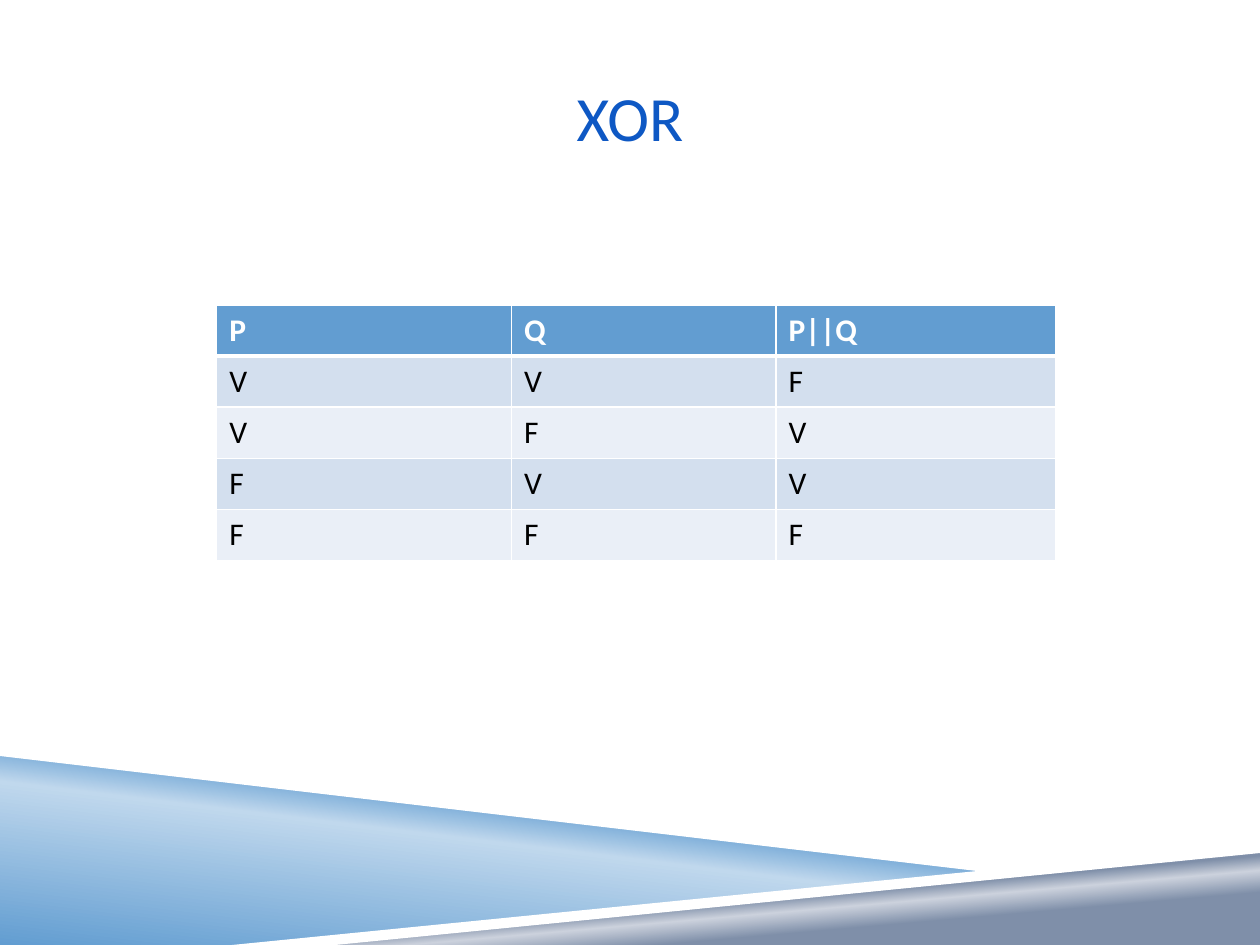
from dataclasses import dataclass

from lxml.etree import SubElement
from pptx import Presentation
from pptx.dml.color import RGBColor
from pptx.enum.text import MSO_ANCHOR, PP_ALIGN
from pptx.oxml import parse_xml
from pptx.oxml.ns import nsdecls, qn
from pptx.util import Inches, Pt


@dataclass(frozen=True)
class Theme:
    """Colours, font and type sizes of the slide."""
    font: str = "Calibri"
    title_size: int = 36
    table_size: int = 18
    title: str = "0E58C4"
    white: str = "FFFFFF"
    black: str = "000000"
    blue: str = "629DD1"
    pale_blue: str = "C0D8ED"
    slate: str = "7F8FA9"
    pale_slate: str = "CCD2DD"
    bands: tuple = ("D3DFEE", "EAEFF7")


THEME = Theme()
ROWS = ("P", "Q", "P||Q"), ("V", "V", "F"), ("V", "F", "V"), ("F", "V", "V"), ("F", "F", "F")
COLUMN_WIDTHS = (2.34, 2.1, 2.22)
ROW_HEIGHT = 0.406


def write_text(frame, text, *, size, color, bold=False, align=PP_ALIGN.LEFT):
    """Write one formatted line into a text frame."""
    para = frame.paragraphs[0]
    para.alignment = align
    span = para.add_run()
    span.text = text
    span.font.name = THEME.font
    span.font.size = Pt(size)
    span.font.bold = bold
    span.font.color.rgb = RGBColor.from_string(color)


def add_polygon(page, points):
    """Add a closed outline without line or shadow."""
    corners = [(Inches(x), Inches(y)) for x, y in points]
    builder = page.shapes.build_freeform(*corners[0])
    builder.add_line_segments(corners[1:], close=True)
    shape = builder.convert_to_shape()
    shape.shadow.inherit = False
    shape.line.fill.background()
    return shape


def add_solid_polygon(page, points, color):
    """Add a polygon of one colour."""
    fill = add_polygon(page, points).fill
    fill.solid()
    fill.fore_color.rgb = RGBColor.from_string(color)


def add_gradient_polygon(page, points, stops, angle):
    """Add a polygon with a gradient turned clockwise by angle degrees."""
    shape = add_polygon(page, points)
    shape.fill.gradient()
    shape.fill.gradient_angle = 360 - angle
    stop_list = next(shape._element.iter(qn("a:gsLst")))
    stop_list.clear()
    for percent, color in stops:
        stop = SubElement(stop_list, qn("a:gs"), pos=str(percent * 1000))
        SubElement(stop, qn("a:srgbClr"), val=color)


def add_wedges(page):
    """Add the two shaded wedges and their white edges at the foot."""
    add_gradient_polygon(
        page, [(0, 5.97), (7.92, 6.92), (2, 7.5), (0, 7.5)],
        [(0, THEME.blue), (52, THEME.pale_blue), (66, THEME.blue)], 277)
    add_gradient_polygon(
        page, [(1.98, 7.5), (10, 6.72), (10, 7.5)],
        [(28, THEME.slate), (40, THEME.pale_slate), (48, THEME.slate)], 265)
    add_solid_polygon(page, [(0, 5.92), (0, 6), (7.9, 6.93), (8.32, 6.9)], THEME.white)
    add_solid_polygon(page, [(10, 6.69), (1.84, 7.5), (2.66, 7.5), (10, 6.77)], THEME.white)


def add_title(page, text):
    """Add the centred slide title."""
    box = page.shapes.add_textbox(Inches(0.75), Inches(0.3), Inches(8.5), Inches(1.25))
    frame = box.text_frame
    frame.word_wrap = True
    frame.vertical_anchor = MSO_ANCHOR.MIDDLE
    frame.margin_left = frame.margin_right = 0
    write_text(frame, text, size=THEME.title_size, color=THEME.title, align=PP_ALIGN.CENTER)


def set_borders(cell, top, bottom):
    """Give a cell white borders, with top and bottom widths in points."""
    properties = cell._tc.get_or_add_tcPr()
    widths = {"lnL": 1, "lnR": 1, "lnT": top, "lnB": bottom}
    for index, (side, width) in enumerate(widths.items()):
        properties.insert(index, parse_xml(
            f'<a:{side} {nsdecls("a")} w="{Pt(width)}"><a:solidFill>'
            f'<a:srgbClr val="{THEME.white}"/></a:solidFill></a:{side}>'))


def add_truth_table(page):
    """Add the truth table with a header and banded rows."""
    frame = page.shapes.add_table(
        len(ROWS), len(COLUMN_WIDTHS), Inches(1.72), Inches(2.42),
        Inches(sum(COLUMN_WIDTHS)), Inches(ROW_HEIGHT * len(ROWS)))
    table = frame.table
    for column, width in zip(table.columns, COLUMN_WIDTHS):
        column.width = Inches(width)
    for row_index, values in enumerate(ROWS):
        header = row_index == 0
        background = THEME.blue if header else THEME.bands[(row_index - 1) % 2]
        for column_index, value in enumerate(values):
            cell = table.cell(row_index, column_index)
            cell.fill.solid()
            cell.fill.fore_color.rgb = RGBColor.from_string(background)
            set_borders(cell, top=3 if row_index == 1 else 1, bottom=3 if header else 1)
            write_text(cell.text_frame, value, size=THEME.table_size, bold=header,
                       color=THEME.white if header else THEME.black)


def main():
    """Build and save the deck."""
    deck = Presentation()
    deck.slide_width, deck.slide_height = Inches(10), Inches(7.5)
    page = deck.slides.add_slide(deck.slide_layouts[6])
    add_wedges(page)
    add_title(page, "XOR")
    add_truth_table(page)
    deck.save("out.pptx")


if __name__ == "__main__":
    main()
